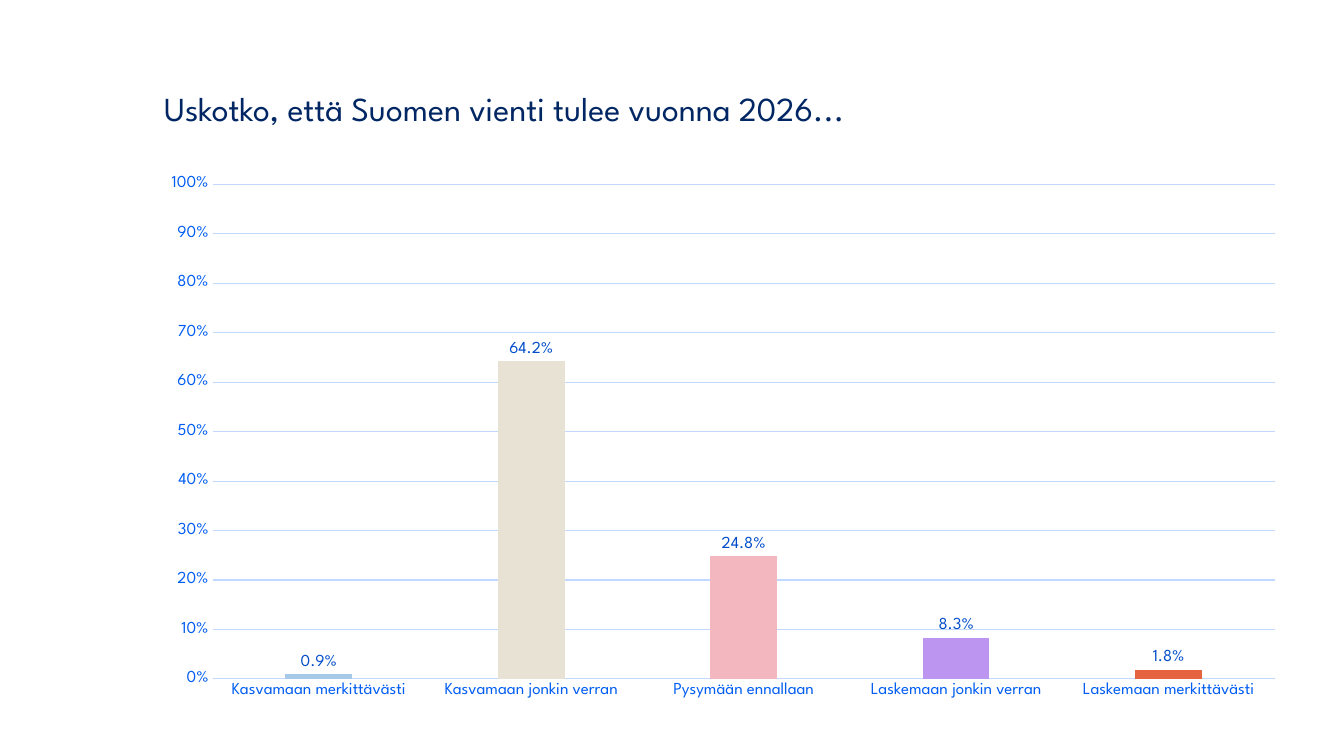
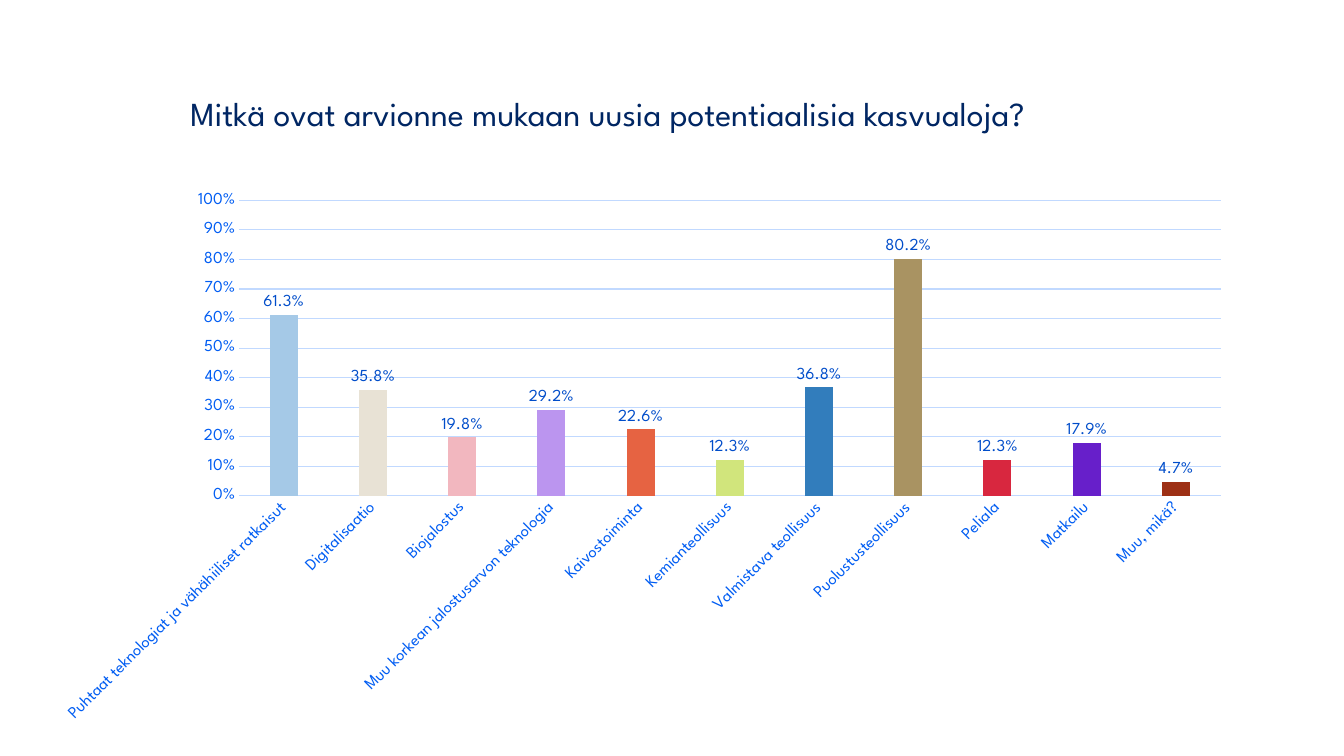
from pptx import Presentation
from pptx.chart.data import CategoryChartData
from pptx.dml.color import RGBColor
from pptx.enum.chart import XL_CHART_TYPE as ChartType
from pptx.enum.chart import XL_LABEL_POSITION as LabelPosition
from pptx.enum.chart import XL_TICK_MARK as TickMark
from pptx.enum.text import MSO_ANCHOR as Anchor
from pptx.oxml import parse_xml
from pptx.oxml.ns import nsdecls, qn
from pptx.util import Inches, Pt

# Shared style
FONT = "League Spartan"
NAVY, AXIS_BLUE, LABEL_BLUE, GRID_BLUE = "002663", "005DF3", "004DCA", "C1D9FF"
BAR_COLORS = ["A5C9E7", "E8E2D5", "F2B7BF", "BB95EF", "E66342", "D1E57C",
              "327DBC", "A99362", "D8273F", "671FCA", "9D3015"]
TITLE_SIZE = (82.07, 19.33)

# Slide contents; places are percentages of the slide, plots of the chart
QUESTIONS = [
    {
        "title": "Uskotko, että Suomen vienti tulee vuonna 2026...",
        "title_place": (11.48, 4.93),
        "chart_place": (11.48, 23.07, 85, 72.8),
        "plot": (5.1, 1.8, 93, 89.9),
        "label_angle": 0,
        "answers": {
            "Kasvamaan merkittävästi": 0.009,
            "Kasvamaan jonkin verran": 0.642,
            "Pysymään ennallaan": 0.248,
            "Laskemaan jonkin verran": 0.083,
            "Laskemaan merkittävästi": 0.018,
        },
    },
    {
        "title": "Mitkä ovat arvionne mukaan uusia potentiaalisia kasvualoja?",
        "title_place": (13.43, 5.6),
        "chart_place": (1.95, 23.6, 89.5, 76.4),
        "plot": (17.7, 3.8, 81.6, 51.2),
        "label_angle": -45,
        "answers": {
            "Puhtaat teknologiat ja vähähiiliset ratkaisut": 0.613,
            "Digitalisaatio": 0.358,
            "Biojalostus": 0.198,
            "Muu korkean jalostusarvon teknologia": 0.292,
            "Kaivostoiminta": 0.226,
            "Kemianteollisuus": 0.123,
            "Valmistava teollisuus": 0.368,
            "Puolustusteollisuus": 0.802,
            "Peliala": 0.123,
            "Matkailu": 0.179,
            "Muu, mikä?": 0.047,
        },
    },
]

presentation = Presentation()
presentation.slide_width = Inches(13.33)
presentation.slide_height = Inches(7.5)


def color(hex_value):
    return RGBColor.from_string(hex_value)


def style_font(font, size, hex_value):
    font.name = FONT
    font.size = Pt(size)
    font.bold = False
    font.color.rgb = color(hex_value)


column = presentation.slide_width / 100
row = presentation.slide_height / 100

for question in QUESTIONS:
    slide = presentation.slides.add_slide(presentation.slide_layouts[6])

    # Title
    left, top = question["title_place"]
    width, height = TITLE_SIZE
    title = slide.shapes.add_textbox(int(left * column), int(top * row),
                                     int(width * column), int(height * row))
    title.text_frame.word_wrap = True
    title.text_frame.vertical_anchor = Anchor.MIDDLE
    paragraph = title.text_frame.paragraphs[0]
    paragraph.line_spacing = 0.9
    run = paragraph.add_run()
    run.text = question["title"]
    style_font(run.font, 24, NAVY)

    # Column chart
    answers = question["answers"]
    chart_data = CategoryChartData(number_format="0.0%")
    chart_data.categories = list(answers)
    chart_data.add_series("Series 1", list(answers.values()))
    left, top, width, height = question["chart_place"]
    chart = slide.shapes.add_chart(
        ChartType.COLUMN_CLUSTERED, int(left * column), int(top * row),
        int(width * column), int(height * row), chart_data).chart
    chart.has_title = False
    chart.has_legend = False
    style_font(chart.font, 10, NAVY)

    # Axes and gridlines
    category_axis, value_axis = chart.category_axis, chart.value_axis
    for axis in (category_axis, value_axis):
        axis.major_tick_mark = axis.minor_tick_mark = TickMark.NONE
        style_font(axis.tick_labels.font, 12, AXIS_BLUE)
    value_axis.minimum_scale, value_axis.maximum_scale = 0, 1
    value_axis.major_unit = 0.1
    value_axis.tick_labels.number_format = "0%"
    value_axis.tick_labels.number_format_is_linked = False
    value_axis.format.line.fill.background()
    for line in (category_axis.format.line, value_axis.major_gridlines.format.line):
        line.color.rgb = color(GRID_BLUE)
        line.width = Pt(0.75)

    # Bars and their labels
    plot = chart.plots[0]
    plot.gap_width, plot.overlap = 219, -27
    plot.vary_by_categories = False
    series = plot.series[0]
    for index, bar_color in enumerate(BAR_COLORS[:len(answers)]):
        fill = series.points[index].format.fill
        fill.solid()
        fill.fore_color.rgb = color(bar_color)
    labels = series.data_labels
    labels.show_value = True
    labels.number_format = "0.0%"
    labels.number_format_is_linked = False
    labels.position = LabelPosition.OUTSIDE_END
    style_font(labels.font, 12, LABEL_BLUE)

    # Angle of the category labels, in 60000ths of a degree
    body = chart.element.find(".//" + qn("c:catAx")).find(
        qn("c:txPr")).find(qn("a:bodyPr"))
    body.set("rot", str(question["label_angle"] * 60000))
    body.set("vert", "horz")

    # Fixed inner plot area
    plot_area = chart.element.find(".//" + qn("c:plotArea"))
    for layout in plot_area.findall(qn("c:layout")):
        plot_area.remove(layout)
    modes = '<c:xMode val="edge"/><c:yMode val="edge"/>'
    sizes = "".join(f'<c:{name} val="{share / 100:.3f}"/>'
                    for name, share in zip("xywh", question["plot"]))
    plot_area.insert(0, parse_xml(
        f'<c:layout {nsdecls("c")}><c:manualLayout>'
        f'<c:layoutTarget val="inner"/>{modes}{sizes}'
        '</c:manualLayout></c:layout>'))

presentation.save("out.pptx")
